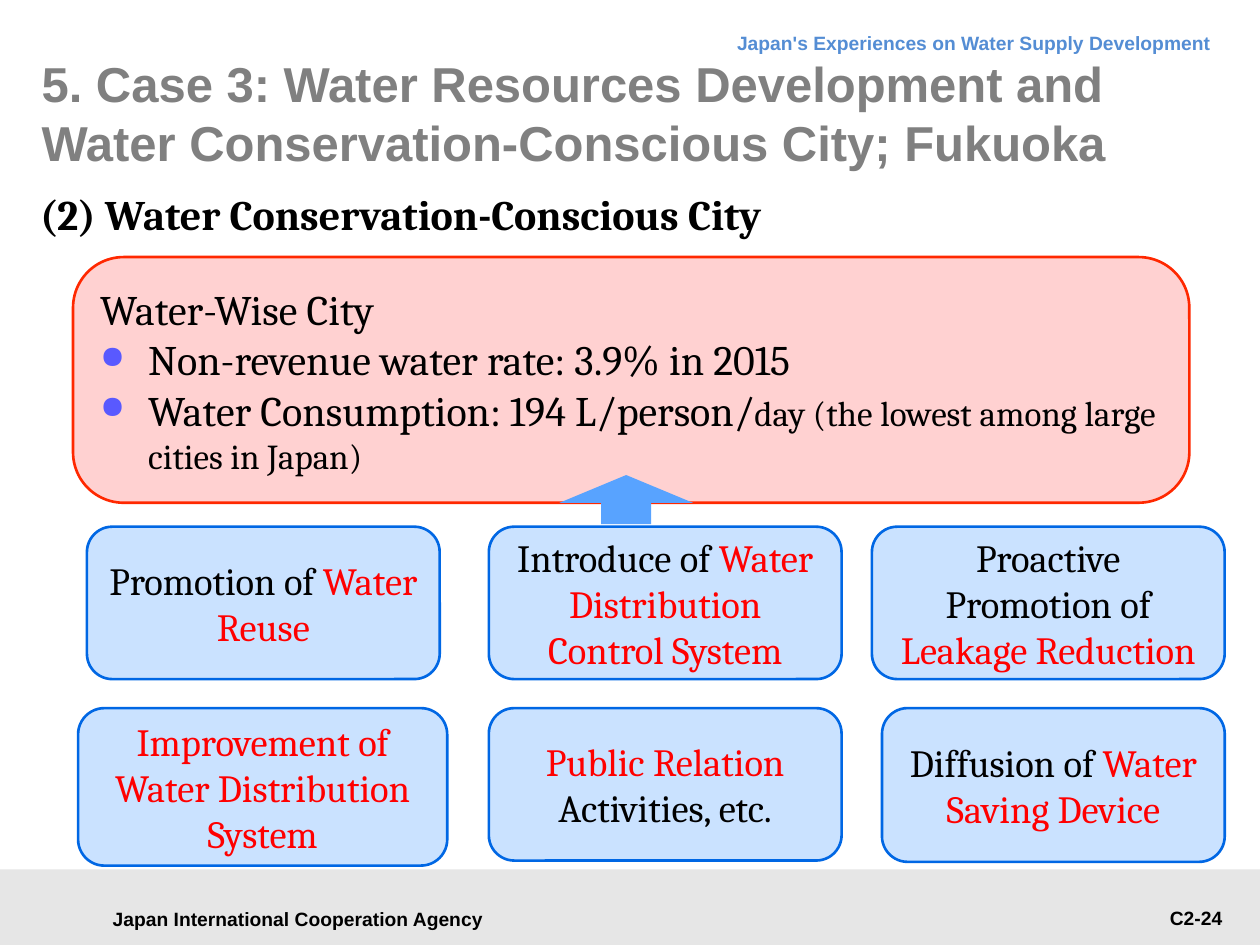
from lxml.etree import SubElement
from pptx import Presentation
from pptx.dml.color import RGBColor
from pptx.enum.shapes import MSO_SHAPE as Preset
from pptx.enum.text import MSO_ANCHOR as Anchor, PP_ALIGN as Align
from pptx.oxml.ns import qn
from pptx.util import Inches, Pt

BLACK, RED, GREY = "000000", "FF0000", "808080"
BLUE_FILL, BLUE_LINE = "CAE2FF", "0067E4"
PINK_FILL, PINK_LINE = "FFD1D1", "FF2800"

# Content: a paragraph is a list of (text, format) runs
HEADER = "Japan's Experiences on Water Supply Development"
TITLE = "5. Case 3: Water Resources Development and Water Conservation-Conscious City; Fukuoka"
SUBTITLE = "(2) Water Conservation-Conscious City"
AGENCY = "Japan International Cooperation Agency"
PAGE = "C2-24"
RESULT_HEADING = "Water-Wise City"
RESULT_BULLETS = [
    [("Non-revenue water rate: 3.9% in 2015", {})],
    [("Water Consumption: 194 L/person/", {}),
     ("day (the lowest among large cities in Japan)", {"size": 20})],
]
# Measures: left, top, width, height, then (text, colour) runs
MEASURES = [
    (0.69, 4.18, 2.8, 1.21, [("Promotion of ", BLACK), ("Water Reuse", RED)]),
    (3.88, 4.18, 2.8, 1.21, [("Introduce of ", BLACK),
                             ("Water Distribution Control System", RED)]),
    (6.92, 4.18, 2.8, 1.21, [("Proactive Promotion of ", BLACK),
                             ("Leakage Reduction", RED)]),
    (0.62, 5.62, 2.93, 1.25, [("Improvement of Water Distribution System", RED)]),
    (3.88, 5.62, 2.8, 1.21, [("Public Relation ", RED), ("Activities, etc.", BLACK)]),
    (7, 5.62, 2.72, 1.22, [("Diffusion of ", BLACK), ("Water Saving Device", RED)]),
]


def rgb(value):
    return RGBColor.from_string(value)


def add_run(paragraph, text, size=24, font="Cambria", color=BLACK, bold=False):
    run = paragraph.add_run()
    run.text = text
    run.font.size, run.font.name, run.font.bold = Pt(size), font, bold
    run.font.color.rgb = rgb(color)


def add_bullet(paragraph, indent=0.38):
    properties = paragraph._p.get_or_add_pPr()
    properties.set("marL", str(Inches(indent)))
    properties.set("indent", str(-Inches(indent)))
    color = SubElement(properties, qn("a:buClr"))
    SubElement(color, qn("a:srgbClr"), val="5959FF")
    SubElement(properties, qn("a:buSzPct"), val="75000")
    SubElement(properties, qn("a:buChar"), char="●")


def add_text(slide, box, text, align=Align.LEFT, anchor=Anchor.TOP,
             margins=(0.1, 0.05, 0.1, 0.05), line_spacing=None, **run_format):
    frame = slide.shapes.add_textbox(*map(Inches, box)).text_frame
    frame.word_wrap, frame.vertical_anchor = True, anchor
    (frame.margin_left, frame.margin_top,
     frame.margin_right, frame.margin_bottom) = map(Inches, margins)
    paragraph = frame.paragraphs[0]
    paragraph.alignment = align
    if line_spacing:
        paragraph.line_spacing = Pt(line_spacing)
    add_run(paragraph, text, **run_format)


def add_shape(slide, preset, box, fill, line=None):
    shape = slide.shapes.add_shape(preset, *map(Inches, box))
    shape.shadow.inherit = False
    shape.fill.solid()
    shape.fill.fore_color.rgb = rgb(fill)
    if line:
        shape.line.color.rgb = rgb(line)
        shape.line.width = Pt(1.5)
    else:
        shape.line.fill.background()
    shape.text_frame.word_wrap = True
    shape.text_frame.vertical_anchor = Anchor.MIDDLE
    return shape


presentation = Presentation()
presentation.slide_width, presentation.slide_height = Inches(10), Inches(7.5)
slide = presentation.slides.add_slide(presentation.slide_layouts[6])

# Header and footer
small = {"size": 11, "font": "Arial", "bold": True}
add_shape(slide, Preset.RECTANGLE, (0, 6.9, 10, 0.6), "E6E6E6")
add_text(slide, (0.71, 7.12, 3.31, 0.34), AGENCY, align=Align.CENTER,
         anchor=Anchor.MIDDLE, **small)
add_text(slide, (2.72, 0.13, 6.99, 0.38), HEADER, align=Align.RIGHT,
         line_spacing=18, color="548DD4", **small)
add_text(slide, (8.23, 7.14, 1.57, 0.29), PAGE, align=Align.RIGHT, **small)

# Titles
add_text(slide, (0.33, 0.5, 9.45, 0.79), TITLE, anchor=Anchor.MIDDLE,
         margins=(0, 0, 0, 0), size=28, font="Arial", color=GREY, bold=True)
add_text(slide, (0.22, 1.5, 9.45, 0.83), SUBTITLE, margins=(0.1, 0, 0, 0), bold=True)

# Result panel
panel = add_shape(slide, Preset.ROUNDED_RECTANGLE, (0.58, 2.04, 8.86, 1.95),
                  PINK_FILL, PINK_LINE)
panel.adjustments[0] = 0.206
heading = panel.text_frame.paragraphs[0]
heading.alignment = Align.LEFT
add_run(heading, RESULT_HEADING)
for runs in RESULT_BULLETS:
    paragraph = panel.text_frame.add_paragraph()
    paragraph.alignment = Align.LEFT
    add_bullet(paragraph)
    for text, run_format in runs:
        add_run(paragraph, text, **run_format)

# Arrow from the measures up to the result
arrow = add_shape(slide, Preset.UP_ARROW, (4.44, 3.77, 1.06, 0.39), "58A3FF")
arrow.adjustments[0], arrow.adjustments[1] = 0.373, 0.566

# Measures
for *box, runs in MEASURES:
    measure = add_shape(slide, Preset.ROUNDED_RECTANGLE, box, BLUE_FILL, BLUE_LINE)
    paragraph = measure.text_frame.paragraphs[0]
    paragraph.alignment = Align.CENTER
    for text, color in runs:
        add_run(paragraph, text, size=22, color=color)

presentation.save("out.pptx")
